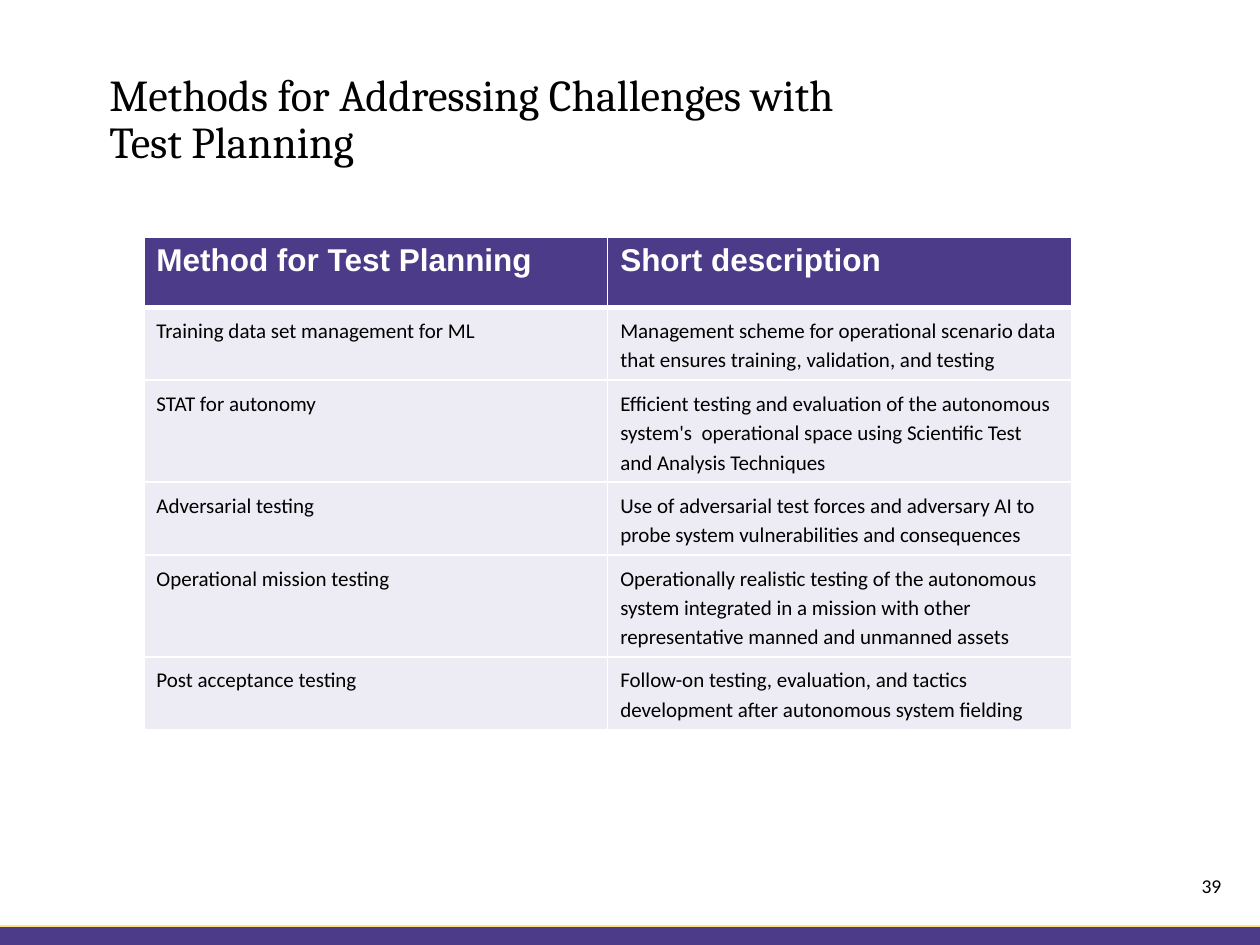
from dataclasses import dataclass

from lxml.etree import SubElement
from pptx import Presentation
from pptx.dml.color import RGBColor as RGB
from pptx.enum.shapes import MSO_CONNECTOR as CONN, MSO_SHAPE as SHAPE
from pptx.enum.text import MSO_ANCHOR as ANCHOR, MSO_AUTO_SIZE as AUTO, PP_ALIGN as ALIGN
from pptx.oxml.ns import qn
from pptx.util import Cm, Pt


@dataclass(frozen=True)
class Theme:
    accent: str = "4C3B89"
    gold: str = "FFDF7F"
    light: str = "EDEBF3"
    text: str = "000000"
    white: str = "FFFFFF"
    title_font: str = "Cambria"
    head_font: str = "Arial"
    body_font: str = "Calibri"
    title_size: float = 25.2
    head_size: float = 18
    body_size: float = 12
    number_size: float = 11.2


T = Theme()
SLIDE_W, SLIDE_H = 25.4, 19.05
ROWS = [
    ("Method for Test Planning", "Short description"),
    ("Training data set management for ML",
     "Management scheme for operational scenario data that ensures training, "
     "validation, and testing"),
    ("STAT for autonomy",
     "Efficient testing and evaluation of the autonomous system's  operational "
     "space using Scientific Test and Analysis Techniques"),
    ("Adversarial testing",
     "Use of adversarial test forces and adversary AI to probe system "
     "vulnerabilities and consequences"),
    ("Operational mission testing",
     "Operationally realistic testing of the autonomous system integrated in a "
     "mission with other representative manned and unmanned assets"),
    ("Post acceptance testing",
     "Follow-on testing, evaluation, and tactics development after autonomous "
     "system fielding"),
]


def style(p, font, size, color, bold=False):
    for r in p.runs:
        r.font.name, r.font.size, r.font.bold = font, Pt(size), bold
        r.font.color.rgb = RGB.from_string(color)


def add_footer_band(s, x, y, w, h):
    band = s.shapes.add_shape(SHAPE.RECTANGLE, Cm(x), Cm(y), Cm(w), Cm(h))
    band.shadow.inherit = False
    band.fill.solid()
    band.fill.fore_color.rgb = RGB.from_string(T.accent)
    band.line.fill.background()
    rule = s.shapes.add_connector(CONN.STRAIGHT, Cm(x), Cm(y), Cm(x + w), Cm(y))
    rule.line.color.rgb = RGB.from_string(T.gold)
    rule.line.width = Pt(1)
    SubElement(rule._element.spPr, qn("a:effectLst"))


def add_title(s, x, y, w, h, text):
    sp = s.shapes.title
    sp.left, sp.top, sp.width, sp.height = Cm(x), Cm(y), Cm(w), Cm(h)
    tf = sp.text_frame
    tf.text = text
    tf.auto_size, tf.word_wrap = AUTO.NONE, True
    tf.vertical_anchor = ANCHOR.TOP
    p = tf.paragraphs[0]
    p.alignment, p.line_spacing = ALIGN.LEFT, 0.9
    style(p, T.title_font, T.title_size, T.text)


def add_page_number(s, x, y, w, h, number):
    tf = s.shapes.add_textbox(Cm(x), Cm(y), Cm(w), Cm(h)).text_frame
    tf.word_wrap = True
    tf.text = number
    p = tf.paragraphs[0]
    p.alignment = ALIGN.RIGHT
    style(p, T.body_font, T.number_size, T.text)


def set_borders(cell, bottom):
    tc_pr = cell._tc.get_or_add_tcPr()
    widths = {"a:lnL": 1, "a:lnR": 1, "a:lnT": 1, "a:lnB": bottom}
    for i, (tag, width) in enumerate(widths.items()):
        ln = SubElement(tc_pr, qn(tag), w=str(Pt(width)))
        SubElement(SubElement(ln, qn("a:solidFill")), qn("a:srgbClr"), val=T.white)
        tc_pr.insert(i, ln)


def format_cell(cell, text, header):
    cell.text = text
    cell.fill.solid()
    cell.fill.fore_color.rgb = RGB.from_string(T.accent if header else T.light)
    set_borders(cell, 3 if header else 1)
    p = cell.text_frame.paragraphs[0]
    if header:
        style(p, T.head_font, T.head_size, T.white, bold=True)
    else:
        cell.margin_top = cell.margin_bottom = Cm(0.15)
        p.line_spacing, p.space_after = 1.15, Pt(10)
        style(p, T.body_font, T.body_size, T.text)


def add_methods_table(s, x, y, w, h, rows):
    n_rows, n_cols = len(rows), len(rows[0])
    table = s.shapes.add_table(n_rows, n_cols, Cm(x), Cm(y), Cm(w), Cm(h)).table
    for i, row in enumerate(rows):
        for j, text in enumerate(row):
            format_cell(table.cell(i, j), text, header=i == 0)


def main():
    prs = Presentation()
    prs.slide_width, prs.slide_height = Cm(SLIDE_W), Cm(SLIDE_H)
    s = prs.slides.add_slide(prs.slide_layouts[5])
    band_h = 0.38
    add_footer_band(s, 0, SLIDE_H - band_h, SLIDE_W, band_h)
    add_title(s, 1.95, 1.35, 18.62, 1.5,
              "Methods for Addressing Challenges with\vTest Planning")
    add_page_number(s, 19.15, 17.5, 5.72, 1.02, "39")
    add_methods_table(s, 2.9, 4.78, 18.7, 8.5, ROWS)
    prs.save("out.pptx")


if __name__ == "__main__":
    main()
